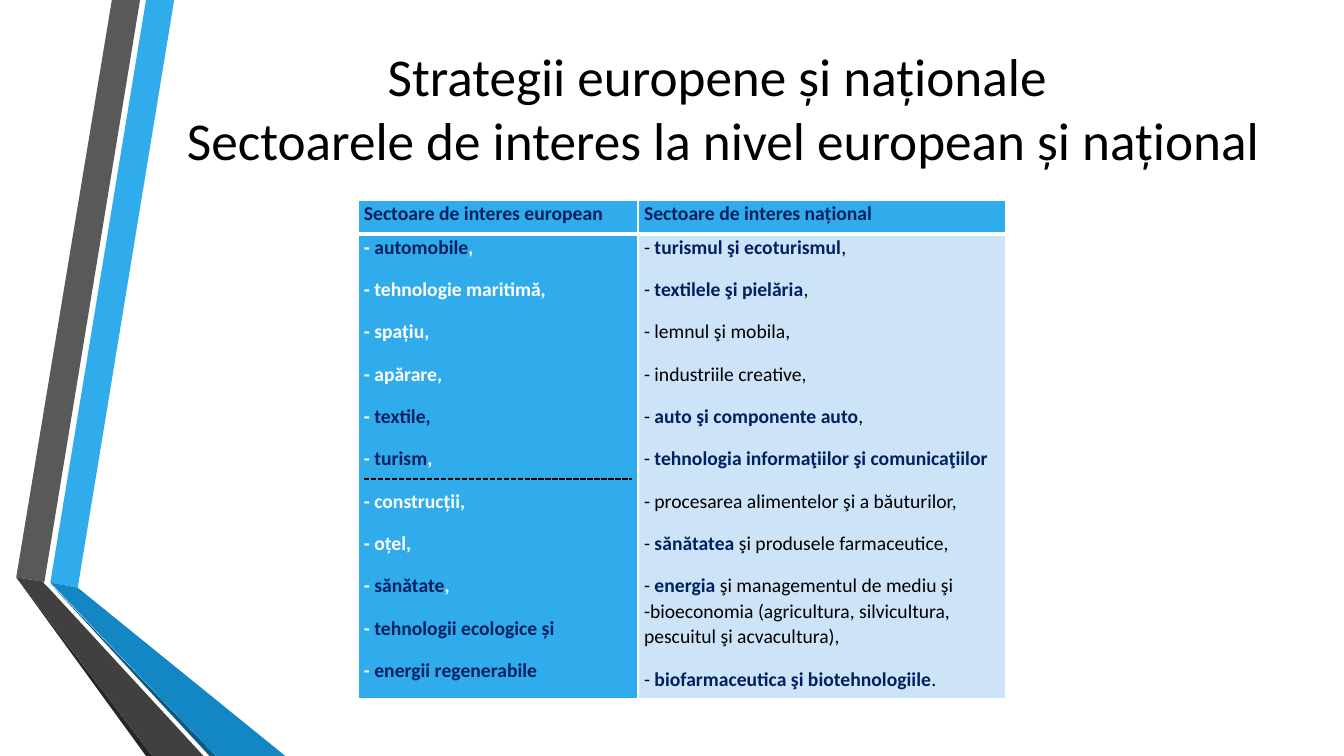
"""Build the slide on sectors of European and national interest."""
from lxml import etree
from pptx import Presentation
from pptx.dml.color import RGBColor
from pptx.enum.dml import MSO_LINE
from pptx.enum.text import MSO_ANCHOR, PP_ALIGN
from pptx.oxml import parse_xml
from pptx.oxml.ns import nsdecls, qn
from pptx.util import Cm, Pt

CENTER, MIDDLE, DASH = PP_ALIGN.CENTER, MSO_ANCHOR.MIDDLE, MSO_LINE.SQUARE_DOT

THEME = {
    "font": "Calibri", "title_size": 38, "table_size": 14,
    "black": "000000", "white": "FFFFFF", "navy": "002060",
    "blue": "30ACEC", "pale": "CDE3F8", "deep_blue": "1287C3",
    "blue_edge": "0C5A82", "grey": "595959", "dark_grey": "404040",
    "grey_edge": "262626",
}

TITLE = ("Strategii europene și naționale \v"
         "Sectoarele de interes la nivel european și național")
TITLE_BOX = (4.06, 0.79, 28.35, 3.84)

HEADERS = ["*Sectoare de interes european*", "*Sectoare de interes național*"]
EUROPEAN = [
    "- *automobile*,",
    "- tehnologie maritimă,",
    "- spațiu,",
    "- apărare,",
    "- *textile,*",
    "- *turism*,",
    "- construcții,",
    "- oțel,",
    "- *sănătate*,",
    "- *tehnologii ecologice și*",
    "- *energii regenerabile*",
]
NATIONAL = [
    "- *turismul şi ecoturismul*,",
    "-* textilele şi pielăria*,",
    "- lemnul şi mobila,",
    "- industriile creative,",
    "- *auto şi componente auto*,",
    "- *tehnologia informaţiilor şi comunicaţiilor*",
    "- procesarea alimentelor şi a băuturilor,",
    "- *sănătatea *şi produsele farmaceutice,",
    "- *energia *şi managementul de mediu şi -bioeconomia "
    "(agricultura, silvicultura, pescuitul şi acvacultura),",
    "- *biofarmaceutica şi biotehnologiile*.",
]
TABLE_CORNER = (9.02, 5.05)
COLUMN_WIDTHS = (7.06, 9.27)
ROW_HEIGHTS = (0.84, 11.71)
CELL_INSET = 0.15
DIVIDER_TOP = 12.07

BANDS = [
    ("blue", [(1.27, 14.68), (1.96, 14.81), (4.39, 0), (3.68, 0)]),
    ("grey", [(3.53, 0), (2.82, 0), (0.41, 14.55), (1.12, 14.66)]),
    ("grey_edge", [(0.41, 14.55), (3.68, 19.05), (3.84, 19.05)]),
    ("blue_edge", [(1.27, 14.71), (5.28, 19.05), (5.44, 19.05)]),
    ("deep_blue", [(1.27, 14.68), (5.44, 19.05), (7.19, 19.05), (1.96, 14.81)]),
    ("dark_grey", [(5.13, 19.05), (1.22, 14.81), (1.09, 14.68),
                   (1.12, 14.66), (0.41, 14.55), (3.84, 19.05)]),
]


def color(name):
    return RGBColor.from_string(THEME[name])


def style_run(run, size, color_name, bold=False):
    run.font.name = THEME["font"]
    run.font.size = Pt(THEME[size])
    run.font.color.rgb = color(color_name)
    run.font.bold = bold


def add_band(slide, fill, points):
    start, *rest = [(Cm(x), Cm(y)) for x, y in points]
    builder = slide.shapes.build_freeform(*start)
    builder.add_line_segments(rest)
    shape = builder.convert_to_shape()
    shape.shadow.inherit = False
    shape.fill.solid()
    shape.fill.fore_color.rgb = color(fill)
    shape.line.fill.background()


def add_title(slide):
    text_frame = slide.shapes.add_textbox(*map(Cm, TITLE_BOX)).text_frame
    text_frame.word_wrap = True
    text_frame.vertical_anchor = MIDDLE
    text_frame.text = TITLE
    paragraph = text_frame.paragraphs[0]
    paragraph.alignment = CENTER
    for run in paragraph.runs:
        style_run(run, "title_size", "black")


def set_borders(cell, bottom_width):
    properties = cell._tc.get_or_add_tcPr()
    widths = {"lnL": 1, "lnR": 1, "lnT": 1, "lnB": bottom_width}
    for position, (side, width) in enumerate(widths.items()):
        properties.insert(position, parse_xml(
            f'<a:{side} {nsdecls("a")} w="{Pt(width)}"><a:solidFill>'
            f'<a:srgbClr val="{THEME["white"]}"/></a:solidFill></a:{side}>'))


def fill_cell(cell, lines, fill, plain_color, plain_bold, bottom_width):
    """Write lines in which asterisks enclose the highlighted words."""
    cell.fill.solid()
    cell.fill.fore_color.rgb = color(fill)
    cell.margin_left = cell.margin_right = Cm(CELL_INSET)
    cell.margin_top = cell.margin_bottom = 0
    set_borders(cell, bottom_width)
    for number, line in enumerate(lines):
        text_frame = cell.text_frame
        paragraph = text_frame.add_paragraph() if number else text_frame.paragraphs[0]
        paragraph.line_spacing = 1.07
        paragraph.space_before = paragraph.space_after = Pt(6)
        for index, part in enumerate(line.split("*")):
            if part:
                run = paragraph.add_run()
                run.text = part
                highlighted = index % 2 == 1
                style_run(run, "table_size", "navy" if highlighted else plain_color,
                          highlighted or plain_bold)


def add_sector_table(slide):
    size = (sum(COLUMN_WIDTHS), sum(ROW_HEIGHTS))
    table = slide.shapes.add_table(2, 2, *map(Cm, TABLE_CORNER + size)).table
    for column, width in zip(table.columns, COLUMN_WIDTHS):
        column.width = Cm(width)
    for row, height in zip(table.rows, ROW_HEIGHTS):
        row.height = Cm(height)
    for index, header in enumerate(HEADERS):
        fill_cell(table.cell(0, index), [header], "blue", "navy", True, 3)
    fill_cell(table.cell(1, 0), EUROPEAN, "blue", "white", True, 1)
    fill_cell(table.cell(1, 1), NATIONAL, "pale", "black", False, 1)


def add_divider(slide):
    left = TABLE_CORNER[0] + CELL_INSET
    right = TABLE_CORNER[0] + COLUMN_WIDTHS[0] - CELL_INSET
    connector = slide.shapes.add_connector(
        1, Cm(left), Cm(DIVIDER_TOP), Cm(right), Cm(DIVIDER_TOP))
    connector.line.color.rgb = color("black")
    connector.line.width = Pt(1.25)
    connector.line.dash_style = DASH
    etree.SubElement(connector._element.spPr, qn("a:effectLst"))


def main():
    presentation = Presentation()
    presentation.slide_width, presentation.slide_height = Cm(33.87), Cm(19.05)
    slide = presentation.slides.add_slide(presentation.slide_layouts[6])
    for fill, points in BANDS:
        add_band(slide, fill, points)
    add_title(slide)
    add_sector_table(slide)
    add_divider(slide)
    presentation.save("out.pptx")


if __name__ == "__main__":
    main()
